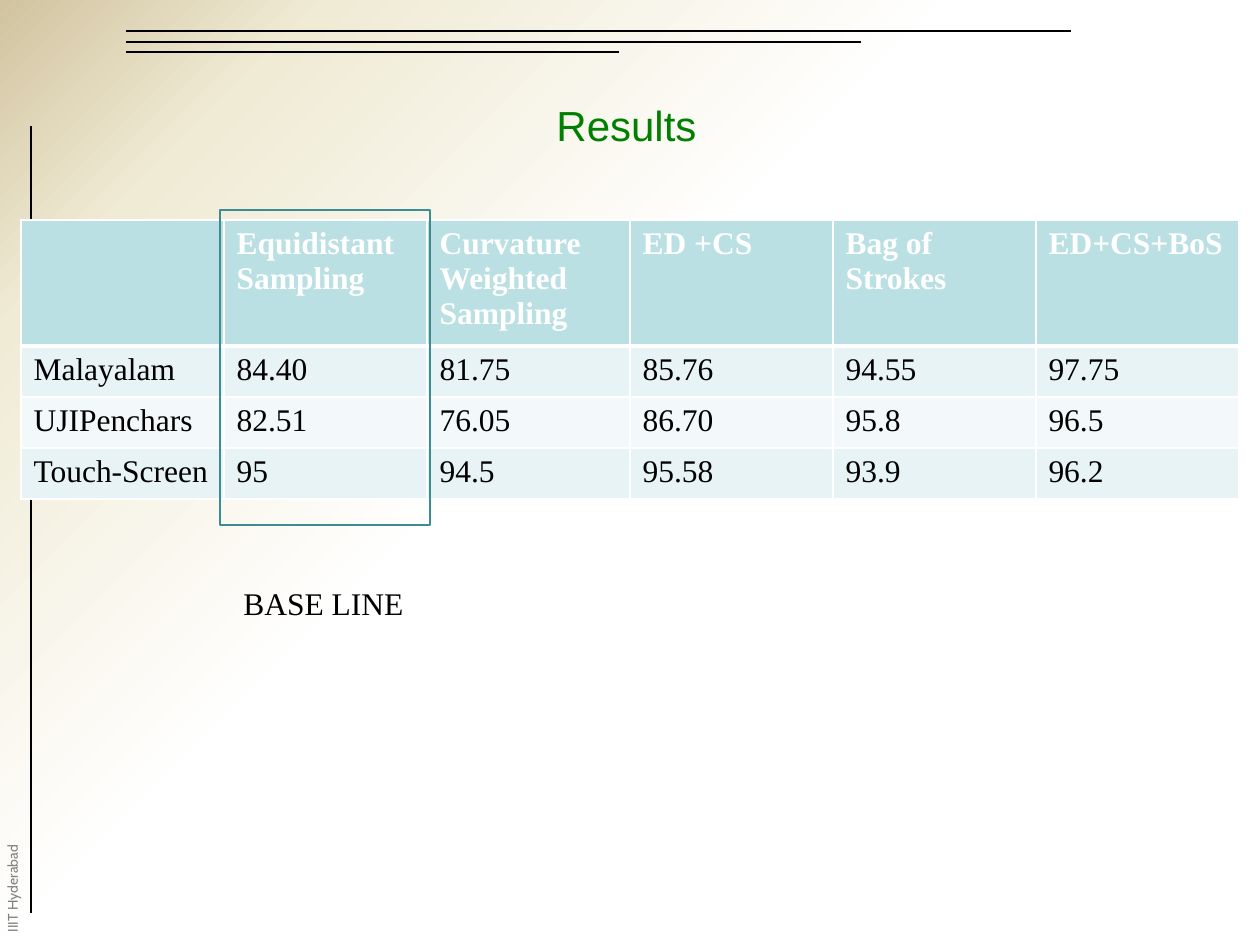
from dataclasses import dataclass

from lxml.etree import SubElement
from pptx import Presentation
from pptx.dml.color import RGBColor
from pptx.enum.shapes import MSO_CONNECTOR, MSO_SHAPE
from pptx.enum.text import MSO_ANCHOR, PP_ALIGN
from pptx.oxml import parse_xml
from pptx.oxml.ns import nsdecls, qn
from pptx.util import Emu, Pt

PX = 914400 / 126


def px(*values):
    return [Emu(round(v * PX)) for v in values]


@dataclass(frozen=True)
class Theme:
    heading: str = "Arial"
    body: str = "Times New Roman"
    label: str = "Cabin"
    title_size: int = 24
    body_size: int = 18
    label_size: int = 8
    hairline: float = 0.75
    green: str = "008000"
    black: str = "000000"
    white: str = "FFFFFF"
    gray: str = "808080"
    teal: str = "3C8C93"
    header: str = "BBE0E3"
    bands: tuple = ("E7F3F4", "F3F9FA")
    backdrop: tuple = ((56, "FFFFFF"), (85, "F0EBD5"), (100, "D1C39F"))


class SlideBuilder:
    def __init__(self, slide, theme):
        self.s = slide
        self.t = theme

    def add_run(self, tf, text, font, size, color, bold=False):
        p = tf.paragraphs[0]
        r = p.add_run()
        r.text = text
        r.font.name = font
        r.font.size = Pt(size)
        r.font.bold = bold
        r.font.color.rgb = RGBColor.from_string(color)
        return p

    def background(self):
        self.s.background.fill.gradient()
        old = self.s.element.find(".//" + qn("a:gradFill"))
        stops = "".join(
            f'<a:gs pos="{pos * 1000}"><a:srgbClr val="{color}"/></a:gs>'
            for pos, color in self.t.backdrop
        )
        old.getparent().replace(old, parse_xml(
            f'<a:gradFill {nsdecls("a")} rotWithShape="1"><a:gsLst>{stops}</a:gsLst>'
            '<a:path path="circle"><a:fillToRect l="100000" t="100000"/></a:path>'
            '</a:gradFill>'
        ))

    def title(self, text, box):
        sp = self.s.shapes.title
        sp.left, sp.top, sp.width, sp.height = px(*box)
        tf = sp.text_frame
        tf.vertical_anchor = MSO_ANCHOR.MIDDLE
        p = self.add_run(tf, text, self.t.heading, self.t.title_size, self.t.green)
        p.alignment = PP_ALIGN.CENTER

    def line(self, x1, y1, x2, y2):
        c = self.s.shapes.add_connector(MSO_CONNECTOR.STRAIGHT, *px(x1, y1, x2, y2))
        c.line.color.rgb = RGBColor.from_string(self.t.black)
        c.line.width = Pt(self.t.hairline)
        SubElement(c.element.spPr, qn("a:effectLst"))

    def text(self, text, box, font, size, color, rotation=0, spacing=None):
        sp = self.s.shapes.add_textbox(*px(*box))
        sp.rotation = rotation
        sp.text_frame.word_wrap = not rotation
        p = self.add_run(sp.text_frame, text, font, size, color)
        p.line_spacing = spacing

    def outline(self, box):
        sp = self.s.shapes.add_shape(MSO_SHAPE.RECTANGLE, *px(*box))
        sp.shadow.inherit = False
        sp.fill.background()
        sp.line.color.rgb = RGBColor.from_string(self.t.teal)
        sp.line.width = Pt(self.t.hairline)

    def borders(self, cell, top, bottom):
        tcPr = cell._tc.get_or_add_tcPr()
        for side, width in (("L", 1), ("R", 1), ("T", top), ("B", bottom)):
            ln = SubElement(tcPr, qn(f"a:ln{side}"), w=str(Pt(width)))
            fill = SubElement(ln, qn("a:solidFill"))
            SubElement(fill, qn("a:srgbClr"), val=self.t.white)

    def table(self, rows, left, top, col_width, header_height, row_height):
        heights = [header_height] + [row_height] * (len(rows) - 1)
        n = len(rows[0])
        frame = self.s.shapes.add_table(
            len(rows), n, *px(left, top, col_width * n, sum(heights)))
        table = frame.table
        for col in table.columns:
            col.width = px(col_width)[0]
        for i, values in enumerate(rows):
            table.rows[i].height = px(heights[i])[0]
            is_header = i == 0
            fill = self.t.header if is_header else self.t.bands[(i - 1) % 2]
            color = self.t.white if is_header else self.t.black
            for j, value in enumerate(values):
                cell = table.cell(i, j)
                self.borders(cell, 3 if i == 1 else 1, 3 if is_header else 1)
                cell.fill.solid()
                cell.fill.fore_color.rgb = RGBColor.from_string(fill)
                if value:
                    self.add_run(cell.text_frame, value, self.t.body,
                                 self.t.body_size, color, is_header)


RESULTS = [
    ["", "Equidistant Sampling", "Curvature Weighted Sampling", "ED +CS",
     "Bag of Strokes", "ED+CS+BoS"],
    ["Malayalam", "84.40", "81.75", "85.76", "94.55", "97.75"],
    ["UJIPenchars", "82.51", "76.05", "86.70", "95.8", "96.5"],
    ["Touch-Screen", "95", "94.5", "95.58", "93.9", "96.2"],
]


def main():
    prs = Presentation()
    prs.slide_width, prs.slide_height = px(1260, 945)
    theme = Theme()
    b = SlideBuilder(prs.slides.add_slide(prs.slide_layouts[5]), theme)
    b.background()
    for y, end in ((31, 1071), (42, 861), (52, 619)):
        b.line(126, y, end, y)
    b.line(31, 126, 31, 913)
    b.text("IIIT Hyderabad", (-43, 872, 116, 29), theme.label, theme.label_size,
           theme.gray, rotation=270, spacing=0.83)
    b.title("Results", (91, 71, 1071, 107))
    b.text("BASE LINE", (231, 578, 242, 50), theme.body, theme.body_size, theme.black)
    b.table(RESULTS, left=21, top=220, col_width=203, header_height=126, row_height=51)
    b.outline((220, 210, 210, 315))
    prs.save("out.pptx")


if __name__ == "__main__":
    main()
